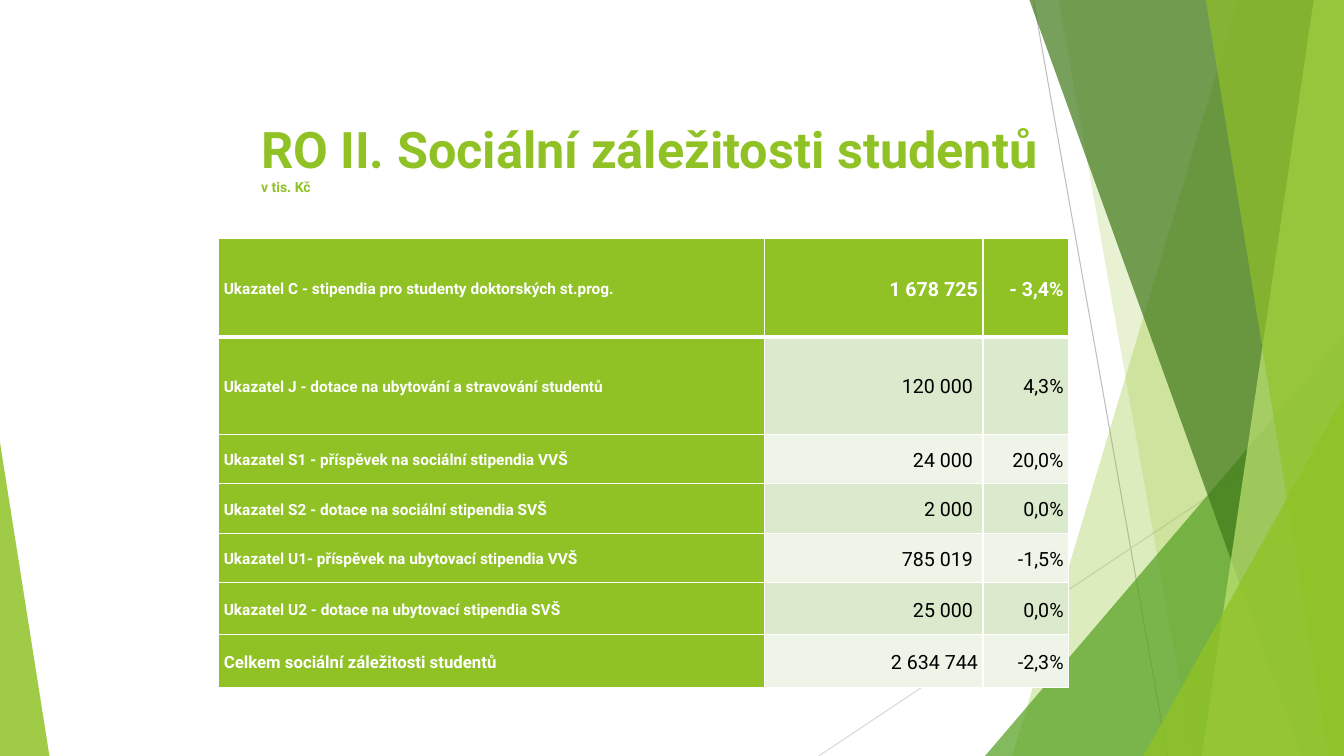
from lxml.etree import SubElement
from pptx import Presentation
from pptx.dml.color import RGBColor
from pptx.enum.shapes import MSO_CONNECTOR, MSO_SHAPE
from pptx.enum.text import MSO_ANCHOR as Anchor, PP_ALIGN as Align
from pptx.oxml.ns import qn
from pptx.util import Inches, Pt

FONT = "Roboto"
WHITE = RGBColor(0xFF, 0xFF, 0xFF)
BLACK = RGBColor(0x00, 0x00, 0x00)
LIME = RGBColor(0x90, 0xC2, 0x26)
PALE_LIME = RGBColor(0xC0, 0xE4, 0x74)
GREEN = RGBColor(0x54, 0xA0, 0x21)
DARK_GREEN = RGBColor(0x3F, 0x78, 0x19)
BAND_DARK = RGBColor(0xDB, 0xE9, 0xCD)
BAND_LIGHT = RGBColor(0xEE, 0xF4, 0xE8)
GRAY = RGBColor(0xBF, 0xBF, 0xBF)
LIGHT_GRAY = RGBColor(0xD9, 0xD9, 0xD9)

WIDTH, HEIGHT = 13.33, 7.5
COLUMN_WIDTHS = [5.41, 2.17, 0.85]
ROW_HEIGHTS = [0.97, 0.97, 0.49, 0.49, 0.49, 0.52, 0.52]
INDICATORS = [
    ("Ukazatel C - stipendia pro studenty doktorských st.prog.", "1 678 725", "- 3,4%"),
    ("Ukazatel J - dotace na ubytování a stravování studentů", "120 000 ", "4,3%"),
    ("Ukazatel S1 - příspěvek na sociální stipendia VVŠ", "24 000 ", "20,0%"),
    ("Ukazatel S2 - dotace na sociální stipendia SVŠ", "2 000 ", "0,0%"),
    ("Ukazatel U1- příspěvek na ubytovací stipendia VVŠ", "785 019 ", "-1,5%"),
    ("Ukazatel U2 - dotace na ubytovací stipendia SVŠ", "25 000 ", "0,0%"),
    ("Celkem sociální záležitosti studentů", "2 634 744", "-2,3%"),
]


def add_text(paragraph, text, size, color, bold=True):
    run = paragraph.add_run()
    run.text = text
    run.font.name = FONT
    run.font.size = Pt(size)
    run.font.bold = bold
    run.font.color.rgb = color


def paint(shape, color, opacity):
    shape.shadow.inherit = False
    shape.line.fill.background()
    shape.fill.solid()
    shape.fill.fore_color.rgb = color
    rgb = shape.element.spPr.find(qn("a:solidFill"))[0]
    SubElement(rgb, qn("a:alpha")).set("val", str(opacity * 1000))


def add_ray(slide, start, end, color):
    ray = slide.shapes.add_connector(
        MSO_CONNECTOR.STRAIGHT, *(Inches(v) for v in start + end))
    ray.line.color.rgb = color
    ray.line.width = Pt(0.75)
    SubElement(ray.element.spPr, qn("a:effectLst"))


def add_facet(slide, top_x, bottom_x, color, opacity):
    points = [(top_x, 0), (WIDTH, 0), (WIDTH, HEIGHT), (bottom_x, HEIGHT)]
    corners = [(Inches(x), Inches(y)) for x, y in points]
    builder = slide.shapes.build_freeform(*corners[0])
    builder.add_line_segments(corners[1:])
    paint(builder.convert_to_shape(), color, opacity)


def add_triangle(slide, left, top, width, apex, color, opacity):
    triangle = slide.shapes.add_shape(
        MSO_SHAPE.ISOSCELES_TRIANGLE, Inches(left), Inches(top),
        Inches(width), Inches(HEIGHT - top))
    triangle.adjustments[0] = apex
    paint(triangle, color, opacity)


def add_background(slide):
    add_ray(slide, (10.25, 0), (11.58, HEIGHT), GRAY)
    add_ray(slide, (WIDTH, 4.03), (8.12, HEIGHT), LIGHT_GRAY)
    add_facet(slide, 12.28, 10.04, LIME, 30)
    add_facet(slide, 10.5, 11.83, LIME, 20)
    add_triangle(slide, 9.77, 3.33, 3.56, 1, GREEN, 72)
    add_facet(slide, 10.21, 12.91, DARK_GREEN, 70)
    add_facet(slide, 13.03, 11.92, PALE_LIME, 70)
    add_facet(slide, 11.96, 13.18, LIME, 65)
    add_triangle(slide, 11.34, 3.93, 1.99, 1, LIME, 80)
    add_triangle(slide, 0, 4.39, 0.49, 0, LIME, 85)


def format_title(title):
    title.left, title.top = Inches(2.49), Inches(1.12)
    title.width, title.height = Inches(8.58), Inches(1.25)
    title.text_frame.vertical_anchor = Anchor.TOP
    heading = title.text_frame.paragraphs[0]
    heading.alignment = Align.LEFT
    add_text(heading, "RO II. Sociální záležitosti studentů", size=36, color=LIME)
    heading.add_line_break()
    add_text(heading, "v tis. Kč", size=10, color=LIME)


def add_borders(cell, bottom_width):
    properties = cell._tc.get_or_add_tcPr()
    for side, width in (("L", 1), ("R", 1), ("T", 1), ("B", bottom_width)):
        border = SubElement(properties, qn(f"a:ln{side}"), w=str(Pt(width)))
        fill = SubElement(border, qn("a:solidFill"))
        SubElement(fill, qn("a:srgbClr"), val=str(WHITE))


def fill_cell(cell, text, row, column):
    is_label, is_header = column == 0, row == 0
    highlighted = is_label or is_header
    add_borders(cell, 3 if is_header else 1)
    cell.fill.solid()
    band = BAND_DARK if row % 2 else BAND_LIGHT
    cell.fill.fore_color.rgb = LIME if highlighted else band
    cell.vertical_anchor = Anchor.MIDDLE
    cell.margin_left = cell.margin_right = Inches(0.05)
    cell.margin_top = cell.margin_bottom = 0
    paragraph = cell.text_frame.paragraphs[0]
    paragraph.line_spacing = 1.15
    if is_label:
        size = 12 if row == len(INDICATORS) - 1 else 11
    else:
        size = 14
        paragraph.alignment = Align.RIGHT
        paragraph.space_after = Pt(10)
    add_text(paragraph, text, size=size,
             color=WHITE if highlighted else BLACK, bold=highlighted)


def add_indicator_table(slide):
    table = slide.shapes.add_table(
        len(ROW_HEIGHTS), len(COLUMN_WIDTHS), Inches(2.17), Inches(2.37),
        Inches(sum(COLUMN_WIDTHS)), Inches(sum(ROW_HEIGHTS))).table
    for column, width in zip(table.columns, COLUMN_WIDTHS):
        column.width = Inches(width)
    for row, height in zip(table.rows, ROW_HEIGHTS):
        row.height = Inches(height)
    for r, indicator in enumerate(INDICATORS):
        for c, text in enumerate(indicator):
            fill_cell(table.cell(r, c), text, r, c)


def main():
    deck = Presentation()
    deck.slide_width, deck.slide_height = Inches(WIDTH), Inches(HEIGHT)
    slide = deck.slides.add_slide(deck.slide_layouts[5])
    add_background(slide)
    format_title(slide.shapes.title)
    add_indicator_table(slide)
    deck.save("out.pptx")


if __name__ == "__main__":
    main()
